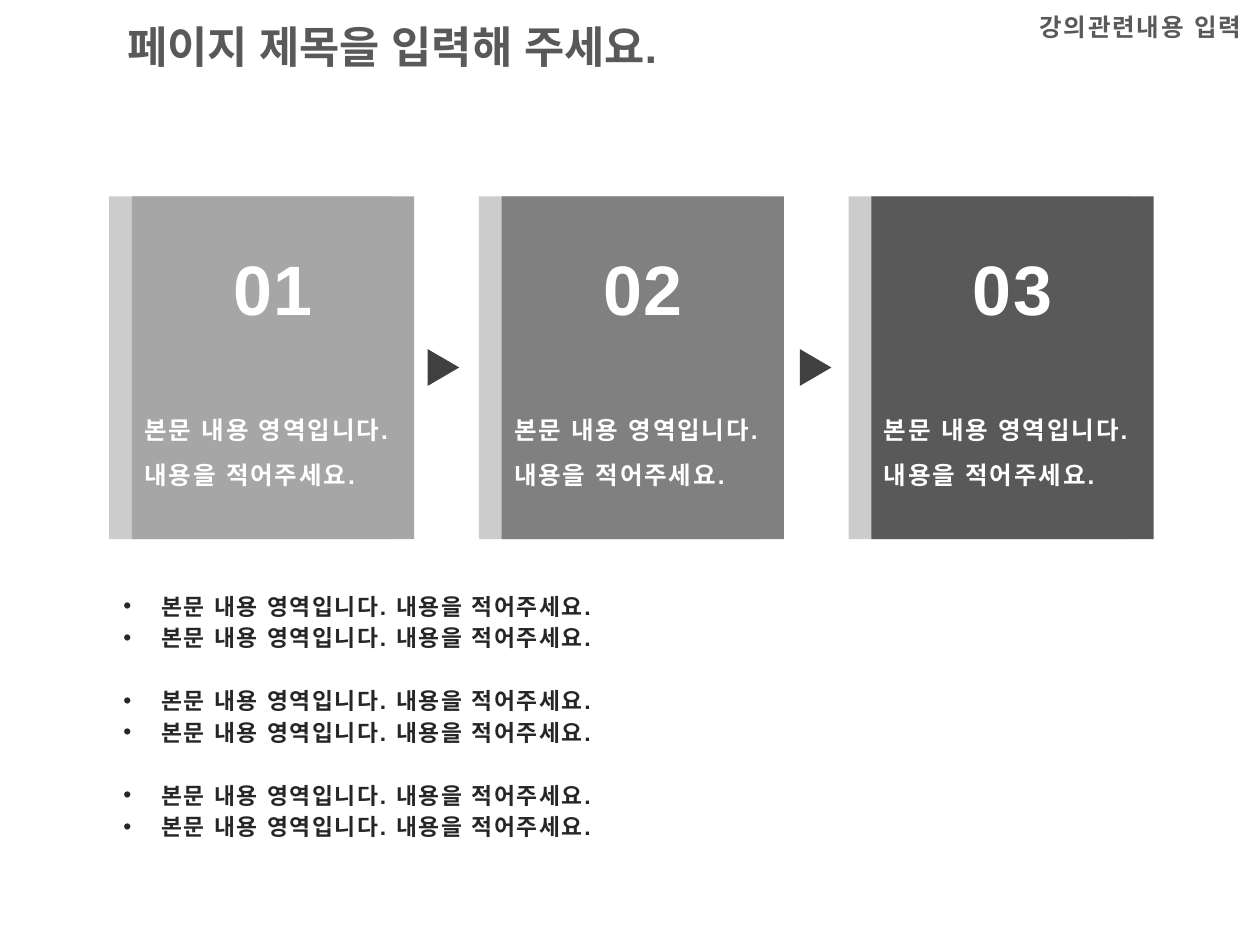
"""Build a slide with three numbered steps above a list of grouped bullets."""
from dataclasses import dataclass

from lxml.etree import SubElement
from pptx import Presentation
from pptx.dml.color import RGBColor
from pptx.enum.shapes import MSO_SHAPE
from pptx.enum.text import MSO_ANCHOR, PP_ALIGN
from pptx.oxml.ns import qn
from pptx.util import Pt

WHITE = RGBColor(0xFF, 0xFF, 0xFF)
LIGHT = RGBColor(0xA6, 0xA6, 0xA6)
MID = RGBColor(0x80, 0x80, 0x80)
DARK = RGBColor(0x59, 0x59, 0x59)
ARROW = RGBColor(0x40, 0x40, 0x40)
INK = RGBColor(0x26, 0x26, 0x26)
FONT = "Arial"
BODY = "본문 내용 영역입니다. 내용을 적어주세요."


@dataclass(frozen=True)
class Box:
    left: float
    top: float
    width: float
    height: float

    def shift(self, step: float) -> "Box":
        return Box(self.left + step, self.top, self.width, self.height)

    def size(self) -> tuple:
        return Pt(self.left), Pt(self.top), Pt(self.width), Pt(self.height)


@dataclass(frozen=True)
class Step:
    label: str
    fill: RGBColor


STEPS = [Step("01", LIGHT), Step("02", MID), Step("03", DARK)]
PITCH = 211.3
CARD = Box(75.4, 112.2, 161.3, 196)
LABEL = Box(75.4, 136.8, 161.3, 55.4)
NOTE = Box(75.4, 225.5, 161.3, 55)
HEAD = Box(242.9, 201, 21, 18)
HOP = 212.7


def write(slide, box: Box, lines: list, *, size: float, color: RGBColor,
          track: float = 0, align=PP_ALIGN.LEFT, anchor=MSO_ANCHOR.TOP,
          lead=None, bullet: str = "", group: int = 0, gap: float = 0) -> None:
    frame = slide.shapes.add_textbox(*box.size()).text_frame
    frame.word_wrap = True
    frame.vertical_anchor = anchor
    for i, line in enumerate(lines):
        para = frame.paragraphs[0] if i == 0 else frame.add_paragraph()
        para.alignment = align
        if lead:
            para.line_spacing = lead
        if group and i and i % group == 0:
            para.space_before = Pt(gap)
        if bullet:
            props = para._p.get_or_add_pPr()
            props.set("marL", str(Pt(21.6)))
            props.set("indent", str(-Pt(21.6)))
            SubElement(props, qn("a:buFont"), typeface=FONT)
            SubElement(props, qn("a:buChar"), char=bullet)
        run = para.add_run()
        run.text = line
        run.font.name = FONT
        run.font.size = Pt(size)
        run.font.bold = True
        run.font.color.rgb = color
        mark = run._r.get_or_add_rPr()
        SubElement(mark, qn("a:ea"), typeface=FONT)
        if track:
            mark.set("spc", str(int(track * 100)))


def draw(slide, kind: MSO_SHAPE, box: Box, fill: RGBColor):
    shape = slide.shapes.add_shape(kind, *box.size())
    shape.shadow.inherit = False
    shape.fill.solid()
    shape.fill.fore_color.rgb = fill
    shape.line.fill.background()
    return shape


def shade(shape, color: RGBColor, dist: float) -> None:
    effect = shape._element.spPr.find(qn("a:effectLst"))
    cast = SubElement(effect, qn("a:outerShdw"), blurRad="0",
                      dist=str(Pt(dist)), dir="10800000", algn="r",
                      rotWithShape="0")
    tint = SubElement(cast, qn("a:srgbClr"), val=str(color))
    SubElement(tint, qn("a:alpha"), val="40000")


def main() -> None:
    deck = Presentation()
    deck.slide_width, deck.slide_height = Pt(720), Pt(540)
    slide = deck.slides.add_slide(deck.slide_layouts[6])

    write(slide, Box(65.5, 0, 620.6, 56.2), ["페이지 제목을 입력해 주세요."],
          size=25, color=DARK, anchor=MSO_ANCHOR.MIDDLE, lead=0.9)
    write(slide, Box(586.8, 3.6, 151.9, 24.5), ["강의관련내용 입력"],
          size=14, color=DARK, track=1)

    for i, step in enumerate(STEPS):
        move = i * PITCH
        card = draw(slide, MSO_SHAPE.RECTANGLE, CARD.shift(move), step.fill)
        shade(card, MID, 13)
        write(slide, LABEL.shift(move), [step.label], size=40, color=WHITE,
              track=1, align=PP_ALIGN.CENTER)
        write(slide, NOTE.shift(move), [BODY], size=14, color=WHITE,
              track=1, lead=1.5)

    for i in range(len(STEPS) - 1):
        head = draw(slide, MSO_SHAPE.ISOSCELES_TRIANGLE,
                    HEAD.shift(i * HOP), ARROW)
        head.rotation = 90

    write(slide, Box(63.4, 332.6, 465.8, 152.6), [BODY] * 6, size=13,
          color=INK, track=1, lead=Pt(18), bullet="•", group=2, gap=18)
    deck.save("out.pptx")


if __name__ == "__main__":
    main()
